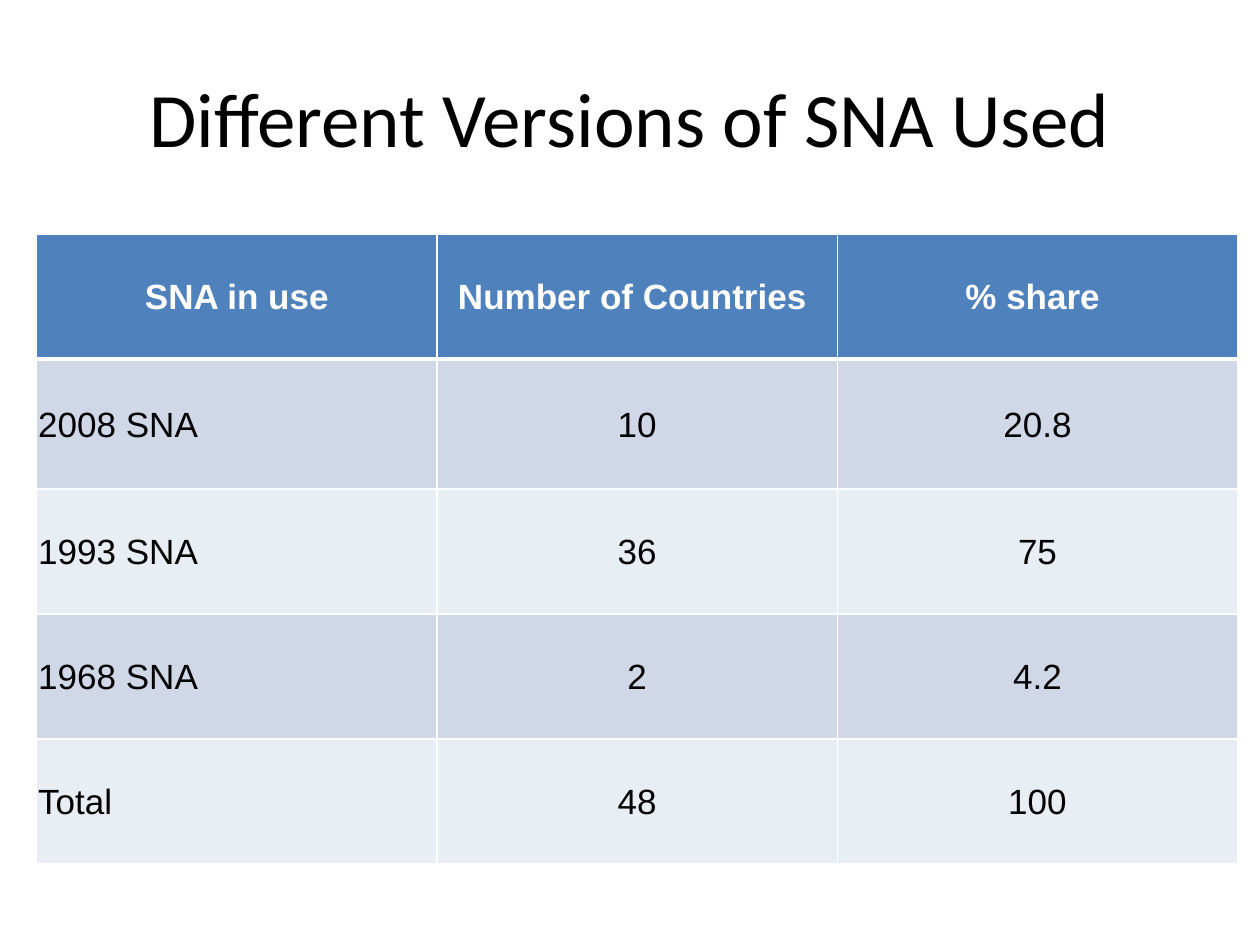
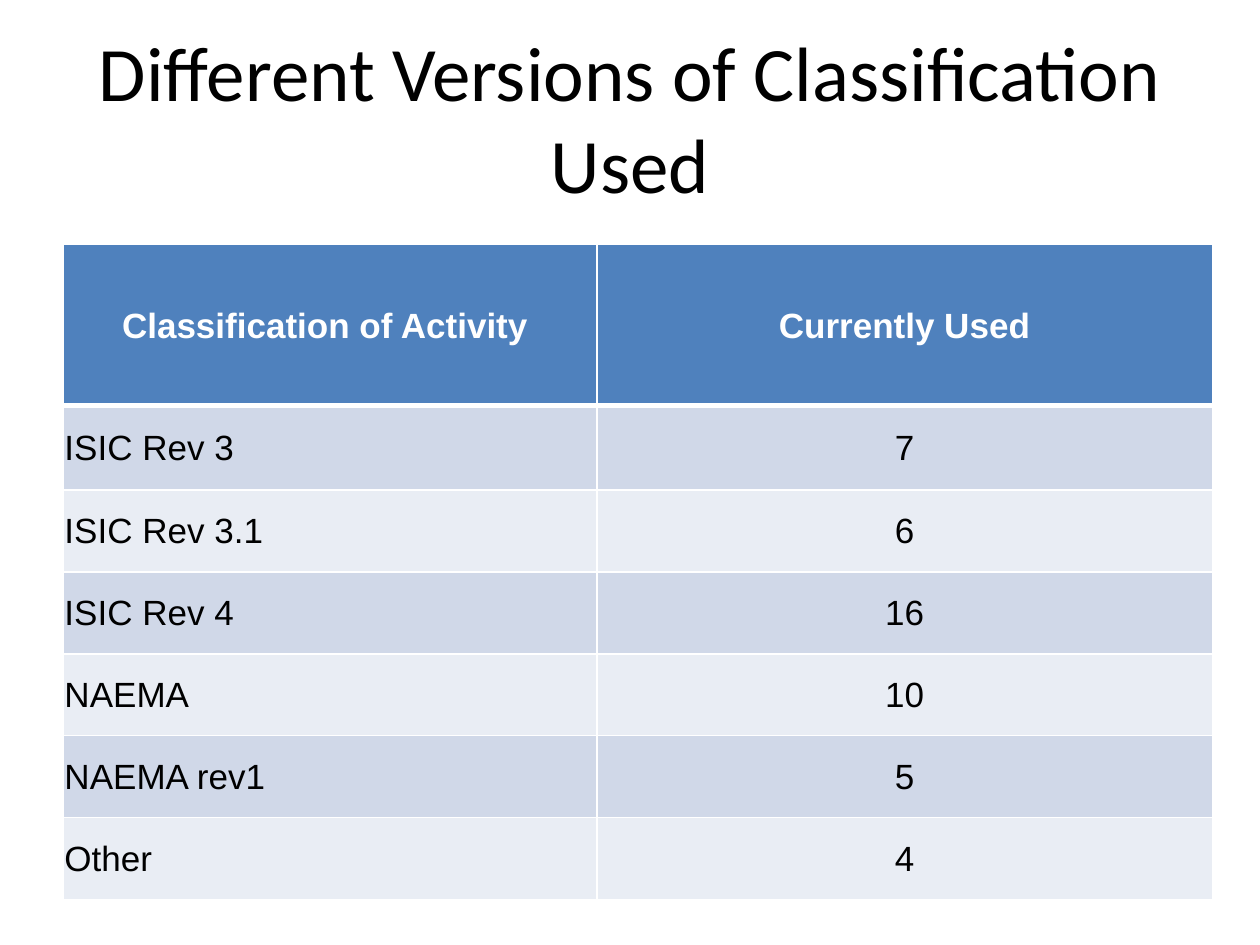
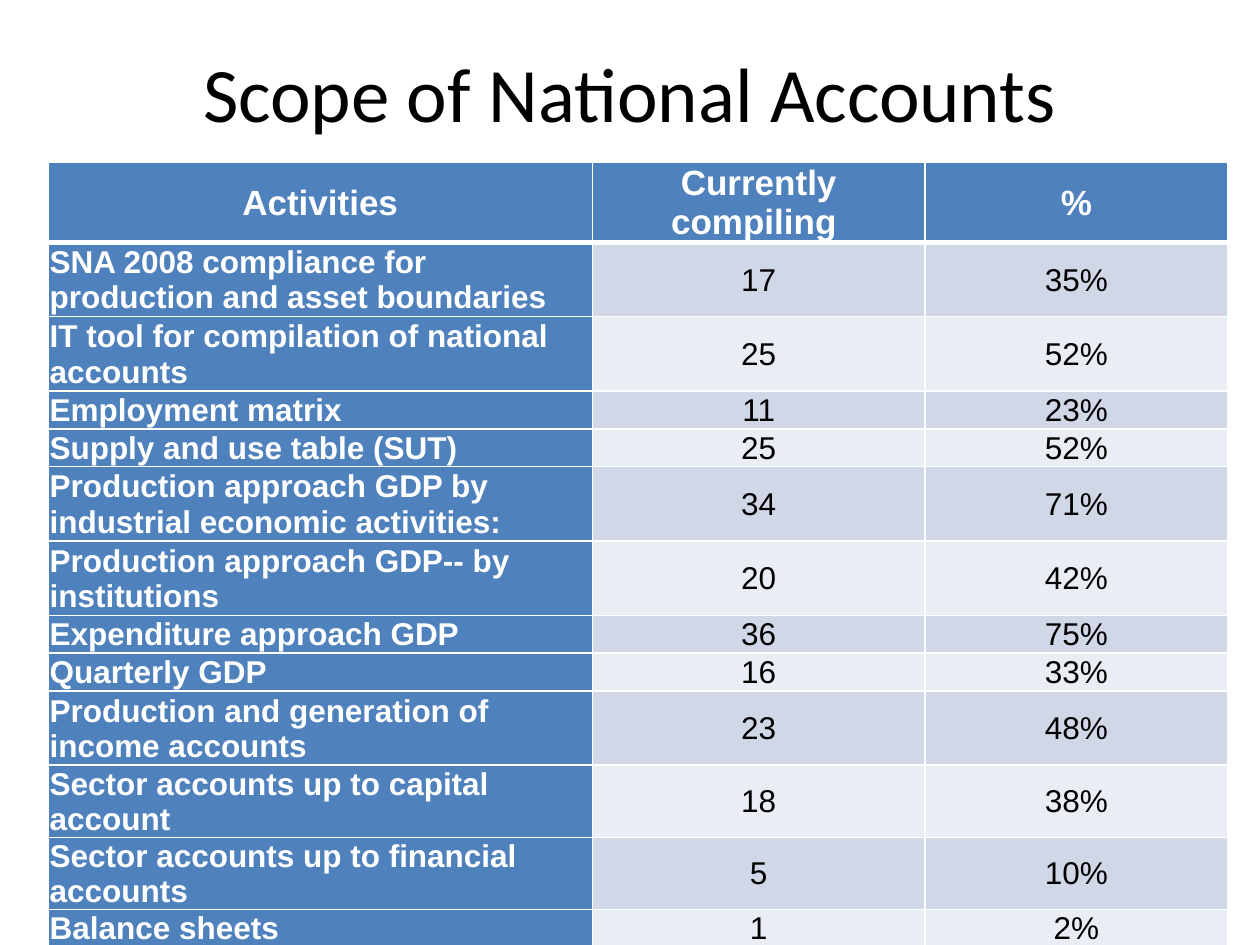
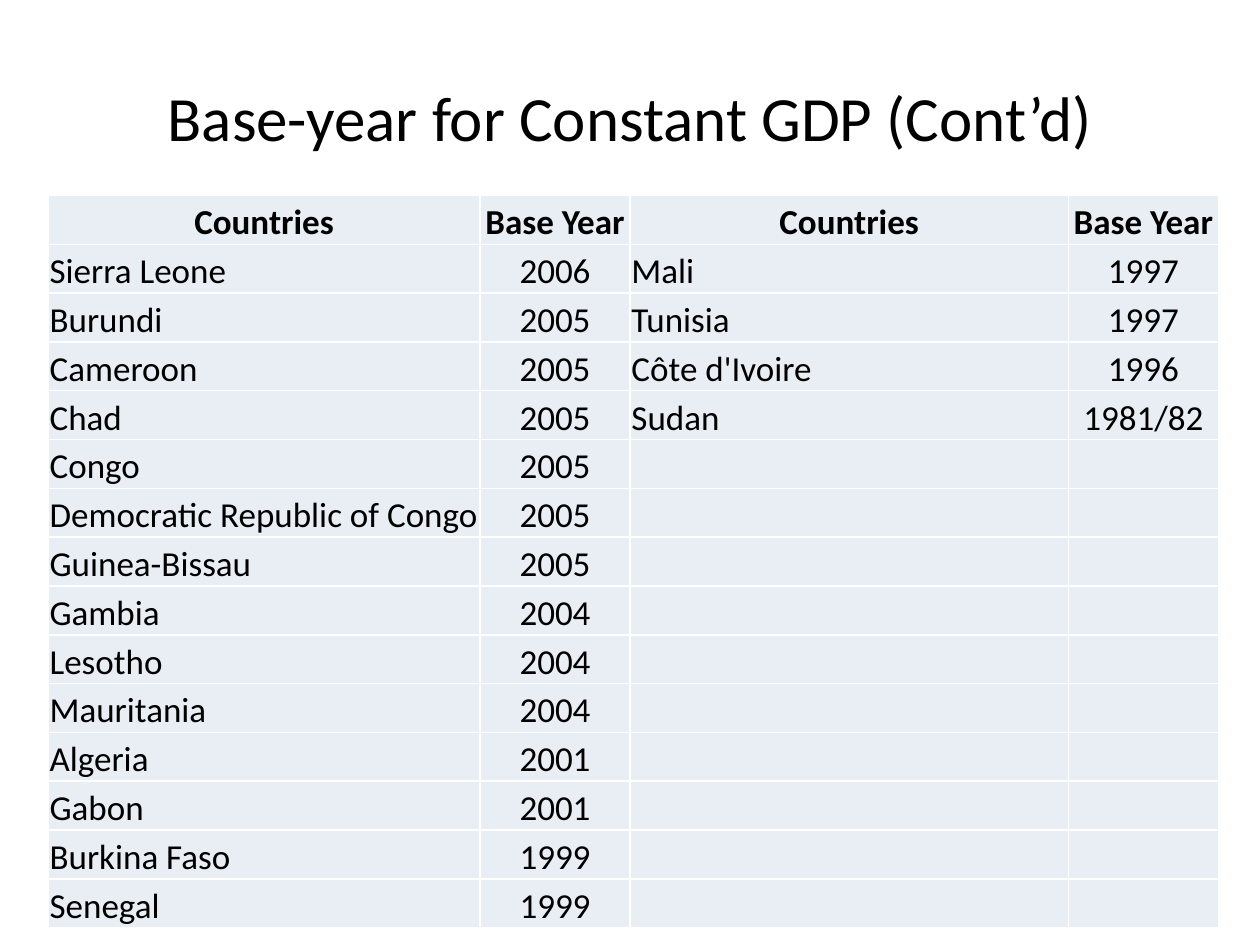
from dataclasses import dataclass
from itertools import zip_longest

from lxml import etree
from pptx import Presentation
from pptx.dml.color import RGBColor
from pptx.enum.text import MSO_ANCHOR, MSO_AUTO_SIZE, PP_ALIGN
from pptx.oxml.ns import qn
from pptx.util import Cm, Pt

CENTER, LEFT = PP_ALIGN.CENTER, PP_ALIGN.LEFT
MIDDLE, BOTTOM = MSO_ANCHOR.MIDDLE, MSO_ANCHOR.BOTTOM
NO_AUTOFIT = MSO_AUTO_SIZE.NONE
TITLE_ONLY = 5


@dataclass(frozen=True)
class Theme:
    header: str = "4F81BD"
    bands: tuple = ("D0D8E8", "E9EDF4")
    pale: str = "E9EDF4"
    white: str = "FFFFFF"
    black: str = "000000"
    title_font: str = "Calibri"
    table_font: str = "Arial"
    title_size: int = 44
    small_title_size: int = 36
    text_size: int = 20
    dense_size: int = 18
    rule: int = 1
    header_rule: int = 3


THEME = Theme()


def add_run(paragraph, text, font_name, size, color, bold=False):
    run = paragraph.add_run()
    run.text = text
    run.font.name = font_name
    run.font.size = Pt(size)
    run.font.bold = bold
    run.font.color.rgb = RGBColor.from_string(color)


def add_borders(cell, top, bottom):
    """Draw white cell borders; top and bottom widths are in points."""
    properties = cell._tc.get_or_add_tcPr()
    widths = {"lnL": THEME.rule, "lnR": THEME.rule, "lnT": top, "lnB": bottom}
    for side, width in widths.items():
        line = etree.SubElement(properties, qn(f"a:{side}"), w=str(Pt(width)))
        fill = etree.SubElement(line, qn("a:solidFill"))
        etree.SubElement(fill, qn("a:srgbClr"), val=THEME.white)


activities = [
    ("Activities", "Currently compiling ", "%"),
    ("SNA 2008 compliance for production and asset boundaries", "17", "35%"),
    ("IT tool for compilation of national accounts", "25", "52%"),
    ("Employment matrix", "11", "23%"),
    ("Supply and use table (SUT)", "25", "52%"),
    ("Production approach GDP by industrial economic activities:", "34", "71%"),
    ("Production approach GDP-- by institutions", "20", "42%"),
    ("Expenditure approach GDP", "36", "75%"),
    ("Quarterly GDP", "16", "33%"),
    ("Production and generation of income accounts", "23", "48%"),
    ("Sector accounts up to capital account", "18", "38%"),
    ("Sector accounts up to financial accounts", "5", "10%"),
    ("Balance sheets", "1", "2%"),
]

base_years_left = [
    ("Countries", "Base Year"), ("Sierra Leone", "2006"), ("Burundi", "2005"),
    ("Cameroon", "2005"), ("Chad", "2005"), ("Congo", "2005"),
    ("Democratic Republic of Congo", "2005"), ("Guinea-Bissau", "2005"),
    ("Gambia", "2004"), ("Lesotho", "2004"), ("Mauritania", "2004"),
    ("Algeria", "2001"), ("Gabon", "2001"), ("Burkina Faso", "1999"),
    ("Senegal", "1999"),
]
base_years_right = [
    ("Countries", "Base Year"), ("Mali", "1997"), ("Tunisia", "1997"),
    ("Côte d'Ivoire", "1996"), ("Sudan", "1981/82"),
]
base_years = [
    left + right
    for left, right in zip_longest(base_years_left, base_years_right, fillvalue=("", ""))
]

# Lengths are in centimetres.
slide_specs = [
    {
        "title": "Different Versions of SNA Used",
        "left": 0.74, "top": 4.72,
        "columns": [8.07] * 3,
        "heights": [2.52, 2.62] + [2.52] * 3,
        "rows": [
            ("SNA in use", "Number of Countries ", "% share "),
            ("2008 SNA", "10", "20.8"),
            ("1993 SNA", "36", "75"),
            ("1968 SNA", "2", "4.2"),
            ("Total", "48", "100"),
        ],
    },
    {
        "title": "Different Versions of Classification Used",
        "left": 1.27, "top": 4.93,
        "columns": [10.76, 12.41],
        "heights": [3.25, 1.7] + [1.65] * 5,
        "rows": [
            ("Classification of Activity ", "Currently Used"),
            ("ISIC Rev 3", "7"),
            ("ISIC Rev 3.1", "6"),
            ("ISIC Rev 4", "16"),
            ("NAEMA", "10"),
            ("NAEMA rev1", "5"),
            ("Other", "4"),
        ],
    },
    {
        "title": "Scope of National Accounts",
        "title_height": 2.16,
        "left": 0.97, "top": 3.28,
        "columns": [10.97, 6.71, 6.1],
        "heights": [0.84] + [1.5, 1.5, 0.76, 0.76] * 2 + [1.5, 1.3, 1.3, 0.76],
        "body_size": THEME.dense_size,
        "label_column": True,
        "rows": activities,
    },
    {
        "title": "Base-year for Constant GDP (Cont’d)",
        "title_size": THEME.small_title_size,
        "left": 0.97, "top": 3.94,
        "columns": [8.71, 3.02, 8.84, 3.02],
        "heights": [14.76 / len(base_years)] * len(base_years),
        "plain": True,
        "rows": base_years,
    },
]

presentation = Presentation()
presentation.slide_width = Cm(25.4)
presentation.slide_height = Cm(19.05)

for spec in slide_specs:
    slide = presentation.slides.add_slide(presentation.slide_layouts[TITLE_ONLY])

    title = slide.shapes.title
    title.left, title.top = Cm(1.27), Cm(0.76)
    title.width, title.height = Cm(22.86), Cm(spec.get("title_height", 3.18))
    title.text_frame.auto_size = NO_AUTOFIT
    title.text_frame.vertical_anchor = MIDDLE
    title_paragraph = title.text_frame.paragraphs[0]
    title_paragraph.alignment = CENTER
    add_run(title_paragraph, spec["title"], THEME.title_font,
            spec.get("title_size", THEME.title_size), THEME.black)

    rows, columns, heights = spec["rows"], spec["columns"], spec["heights"]
    plain = spec.get("plain", False)
    table = slide.shapes.add_table(
        len(rows), len(columns), Cm(spec["left"]), Cm(spec["top"]),
        Cm(sum(columns)), Cm(sum(heights))).table
    table.horz_banding = False
    table.first_row = not plain
    table.first_col = spec.get("label_column", False)
    for column, width in zip(table.columns, columns):
        column.width = Cm(width)
    for row, height in zip(table.rows, heights):
        row.height = Cm(height)

    header_rule = THEME.rule if plain else THEME.header_rule
    for row_index, texts in enumerate(rows):
        is_header = row_index == 0
        for column_index, text in enumerate(texts):
            is_label = table.first_col and column_index == 0
            strong = not plain and (is_header or is_label)
            if plain:
                fill_color = THEME.pale
            elif strong:
                fill_color = THEME.header
            else:
                fill_color = THEME.bands[(row_index - 1) % 2]

            cell = table.cell(row_index, column_index)
            add_borders(cell,
                        top=header_rule if row_index == 1 else THEME.rule,
                        bottom=header_rule if is_header else THEME.rule)
            cell.fill.solid()
            cell.fill.fore_color.rgb = RGBColor.from_string(fill_color)
            cell.margin_left = cell.margin_right = cell.margin_top = Cm(0.03)
            cell.margin_bottom = 0
            cell.vertical_anchor = BOTTOM if plain else MIDDLE

            if text:
                paragraph = cell.text_frame.paragraphs[0]
                is_name = column_index == 0 or (plain and column_index % 2 == 0)
                paragraph.alignment = LEFT if is_name and not is_header else CENTER
                add_run(paragraph, text,
                        THEME.title_font if plain else THEME.table_font,
                        THEME.text_size if is_header else spec.get("body_size", THEME.text_size),
                        THEME.white if strong else THEME.black,
                        bold=is_header or is_label)

presentation.save("out.pptx")
